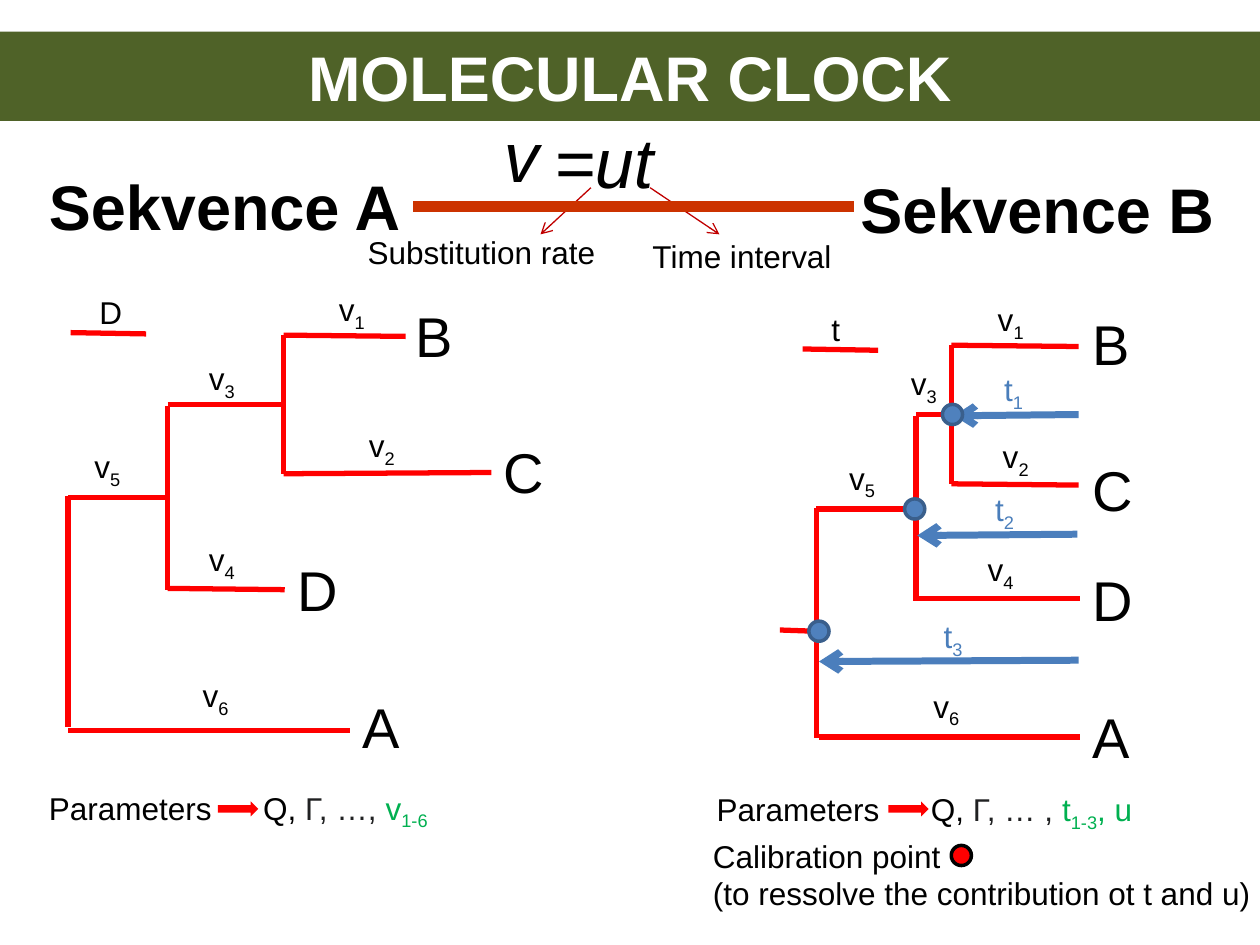
from lxml import etree
from pptx import Presentation
from pptx.dml.color import RGBColor
from pptx.enum import shapes as kinds, text as txt
from pptx.oxml.ns import qn
from pptx.util import Inches, Pt

BLACK, RED, GREEN, GRAY = "000000", "FF0000", "00B050", "202122"
TIME_LINE, TIME_TEXT = "4B7EBC", "4A7EBB"

BRANCHES = [
    (2.25, 2.66, 3.22, 2.67), (2.25, 2.66, 2.25, 3.76), (2.25, 3.76, 3.9, 3.75),
    (1.33, 4.67, 2.26, 4.68), (1.33, 3.21, 2.25, 3.21), (1.33, 3.22, 1.33, 4.68),
    (0.54, 3.95, 1.33, 3.95), (0.54, 3.94, 0.54, 5.77), (0.54, 5.8, 2.78, 5.8),
]
CLOCK_BRANCHES = [
    (7.55, 2.74, 8.56, 2.75), (7.55, 2.74, 7.55, 3.84), (7.55, 3.84, 8.56, 3.85),
    (7.27, 4.75, 8.57, 4.75), (7.27, 3.29, 7.55, 3.29), (7.27, 3.3, 7.27, 4.77),
    (6.48, 4.04, 7.26, 4.04), (6.48, 4.03, 6.48, 5.86), (6.5, 5.85, 8.57, 5.85),
    (6.19, 5, 6.47, 5.01),
]
TAXA = {"C": (3.9, 3.42), "B": (3.2, 2.34), "D": (2.26, 4.36), "A": (2.78, 5.45)}
CLOCK_TAXA = {"C": (8.57, 3.57), "B": (8.57, 2.41), "D": (8.57, 4.44), "A": (8.57, 5.53)}
LENGTHS = [(2.59, 2.25), (2.83, 3.33), (1.56, 2.8), (1.56, 4.24), (0.65, 3.5), (1.51, 5.32)]
CLOCK_LENGTHS = [(7.82, 2.33), (7.86, 3.42), (7.13, 2.84), (7.74, 4.32), (6.64, 3.59), (7.31, 5.4)]
TIMES = [(7.87, 2.89), (7.8, 3.84), (7.39, 4.85)]
TIME_ARROWS = [(8.56, 3.29, 7.57, 3.3), (8.55, 4.24, 7.28, 4.25), (8.56, 5.24, 6.5, 5.25)]
NODES = [(6.42, 4.93), (7.18, 3.96), (7.48, 3.21)]


def rgb(value):
    """Turn a hex string into a colour."""
    return RGBColor.from_string(value)


def style(run, size, color=BLACK, bold=False, italic=False):
    """Format one run of text."""
    run.font.name = "Arial"
    run.font.size = Pt(size)
    run.font.bold = bold
    run.font.italic = italic
    run.font.color.rgb = rgb(color)


def label(slide, left, top, width, height, words, size=18, wrap=False, **look):
    """Add a text box, one paragraph for each line of words."""
    box = slide.shapes.add_textbox(Inches(left), Inches(top), Inches(width), Inches(height))
    frame = box.text_frame
    frame.word_wrap = wrap
    frame.auto_size = txt.MSO_AUTO_SIZE.SHAPE_TO_FIT_TEXT
    frame.text = words
    for paragraph in frame.paragraphs:
        for run in paragraph.runs:
            style(run, size, **look)
    return frame.paragraphs[0]


def add_part(paragraph, words, color, subscript=False):
    """Append a coloured run, lowered when it is a subscript."""
    run = paragraph.add_run()
    run.text = words
    style(run, 18, color)
    if subscript:
        run.font._element.set("baseline", "-25000")


def indexed_labels(slide, letter, places, color=BLACK):
    """Number a letter with subscripts, one label at each place."""
    for index, (left, top) in enumerate(places, 1):
        symbol = label(slide, left, top, 0.42, 0.4, letter, color=color)
        add_part(symbol, str(index), color, subscript=True)


def line(slide, ends, color=RED, width=3, arrow=False):
    """Draw a straight line, with an open arrowhead if wanted."""
    connector = slide.shapes.add_connector(
        kinds.MSO_CONNECTOR.STRAIGHT, *(Inches(value) for value in ends))
    connector.line.color.rgb = rgb(color)
    connector.line.width = Pt(width)
    if arrow:
        etree.SubElement(connector.line._get_or_add_ln(), qn("a:tailEnd"), type="arrow")
    etree.SubElement(connector._element.spPr, qn("a:effectLst"))


def solid(slide, kind, left, top, width, height, fill, outline=None):
    """Add a filled preset shape without shadow."""
    shape = slide.shapes.add_shape(
        kind, Inches(left), Inches(top), Inches(width), Inches(height))
    shape.shadow.inherit = False
    shape.fill.solid()
    shape.fill.fore_color.rgb = rgb(fill)
    if outline:
        shape.line.color.rgb = rgb(outline)
        shape.line.width = Pt(2)
    else:
        shape.line.fill.background()
    return shape


def tree(slide, branches, taxa, lengths):
    """Draw a tree with its taxa and branch lengths."""
    for ends in branches:
        line(slide, ends)
    for taxon, (left, top) in taxa.items():
        label(slide, left, top, 0.53, 0.64, taxon, 32)
    indexed_labels(slide, "v", lengths)


def scale_bar(slide, left, top, unit, width):
    """Draw a scale bar with its unit above."""
    line(slide, (left, top, left + 0.6, top + 0.01))
    label(slide, left + 0.13, top - 0.36, width, 0.4, unit)


def parameters(slide, left, top, arrow_left, gamma, estimated):
    """List the parameters, with an arrow in the tabbed gap."""
    row = label(slide, left, top, 3.5, 0.4, "Parameters\tQ, ")
    tabs = etree.SubElement(row._p.get_or_add_pPr(), qn("a:tabLst"))
    etree.SubElement(tabs, qn("a:tab"), pos=str(Inches(1.7)), algn="l")
    add_part(row, gamma, GRAY)
    for words, subscript in estimated:
        add_part(row, words, GREEN, subscript)
    solid(slide, kinds.MSO_SHAPE.RIGHT_ARROW, arrow_left, 6.36, 0.32, 0.12, RED)


def formula(slide):
    """Show the two sequences and the rate formula between them."""
    label(slide, 0.29, 1.28, 3.02, 0.71, "Sekvence A", 36, bold=True)
    label(slide, 6.73, 1.3, 3.03, 0.71, "Sekvence B", 36, bold=True)
    label(slide, 3.9, 0.84, 0.55, 0.77, "v", 40, italic=True)
    label(slide, 4.3, 0.89, 1, 0.77, "=ut", 40, italic=True)
    label(slide, 2.82, 1.8, 2.52, 0.4, "Substitution rate", wrap=True)
    label(slide, 5.08, 1.83, 2.05, 0.4, "Time interval", wrap=True)
    for ends in [(4.69, 1.49, 4.29, 1.86), (5.16, 1.49, 5.71, 1.86)]:
        line(slide, ends, "C00000", 0.75, arrow=True)
    line(slide, (3.28, 1.64, 6.78, 1.64), "CC3300", 6)


def title_band(slide):
    """Add the title across the full width."""
    band = solid(slide, kinds.MSO_SHAPE.RECTANGLE, 0, 0.25, 10, 0.71, "4F6228")
    band.text_frame.text = "MOLECULAR CLOCK"
    heading = band.text_frame.paragraphs[0]
    heading.alignment = txt.PP_ALIGN.CENTER
    style(heading.runs[0], 36, "FFFFFF", bold=True)


def main():
    """Build and save the slide."""
    deck = Presentation()
    deck.slide_width, deck.slide_height = Inches(10), Inches(7.5)
    slide = deck.slides.add_slide(deck.slide_layouts[6])

    tree(slide, BRANCHES, TAXA, LENGTHS)
    tree(slide, CLOCK_BRANCHES, CLOCK_TAXA, CLOCK_LENGTHS)
    formula(slide)
    parameters(slide, 0.29, 6.21, 1.73, "Γ, …, ", [("v", False), ("1-6", True)])
    parameters(slide, 5.59, 6.22, 7.05, "Γ, … , ",
               [("t", False), ("1-3", True), (", u", False)])

    for ends in TIME_ARROWS:
        line(slide, ends, TIME_LINE, 4, arrow=True)
    for left, top in NODES:
        solid(slide, kinds.MSO_SHAPE.OVAL, left, top, 0.16, 0.16, "4F81BD", "3A5F8C")
    indexed_labels(slide, "t", TIMES, TIME_TEXT)

    label(slide, 5.56, 6.59, 4.58, 0.71,
          "Calibration point\n(to ressolve the contribution ot t and u)")
    solid(slide, kinds.MSO_SHAPE.OVAL, 7.55, 6.71, 0.16, 0.16, RED, BLACK)
    title_band(slide)
    scale_bar(slide, 0.56, 2.64, "D", 0.38)
    scale_bar(slide, 6.37, 2.77, "t", 0.27)
    deck.save("out.pptx")


if __name__ == "__main__":
    main()
